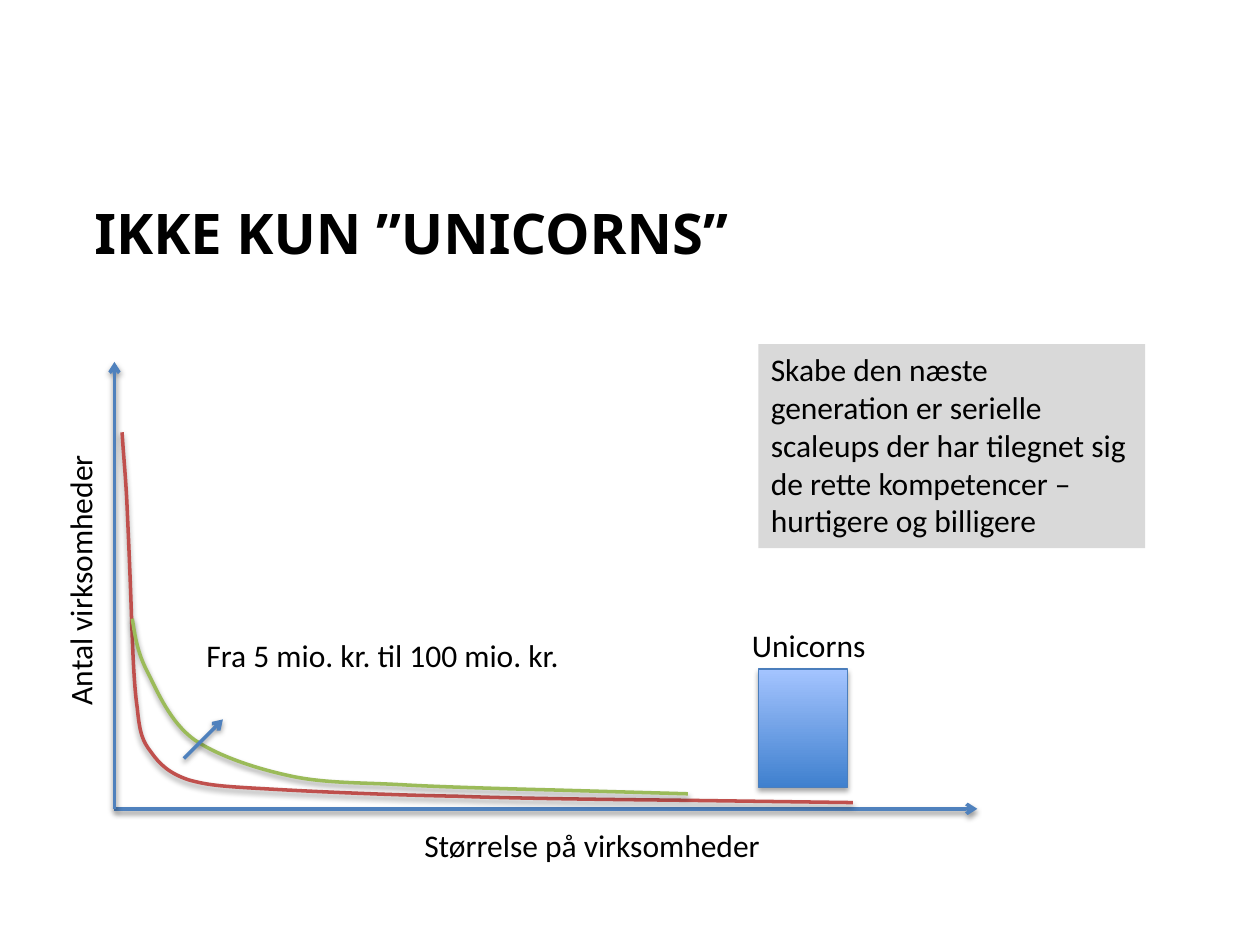
from lxml import etree
from pptx import Presentation
from pptx import util as u
from pptx.dml.color import RGBColor
from pptx.enum import shapes, text
from pptx.oxml import ns

Pt = u.Pt
BLUE, RED, GREEN = "4F81BD", "C0504D", "9BBB59"


def hue(code):
    """Turn a hex string into a colour."""
    return RGBColor.from_string(code)


def sub(node, tag, **attrs):
    """Append a drawing element to a node."""
    return etree.SubElement(node, ns.qn("a:" + tag), attrs)


class Deck:
    """Hold the style and the current slide."""

    font, size, ink = "Calibri", 18, "000000"

    def __init__(self, wide, high):
        """Open a deck with one blank slide."""
        self.show = Presentation()
        self.show.slide_width, self.show.slide_height = Pt(wide), Pt(high)
        self.slide = self.show.slides.add_slide(self.show.slide_layouts[6])
        self.items = self.slide.shapes

    def shade(self, item, alpha=38, drop=1.6):
        """Give an item a soft shadow straight below it."""
        effects = sub(item._element.spPr, "effectLst")
        cast = sub(effects, "outerShdw", blurRad=str(Pt(3.1)), dist=str(Pt(drop)),
                   dir="5400000", rotWithShape="0")
        tint = sub(cast, "srgbClr", val=self.ink)
        sub(tint, "alpha", val=str(alpha * 1000))

    def stroke(self, item, code, width=2):
        """Set the line of an item."""
        item.line.color.rgb = hue(code)
        item.line.width = Pt(width)

    def text(self, words, x, y, w, h, size=None, font=None, bold=False, wrap=True,
             turn=0, fill=None, grow=True, anchor=text.MSO_ANCHOR.TOP):
        """Add a text box with its format."""
        box = self.items.add_textbox(Pt(x), Pt(y), Pt(w), Pt(h))
        box.rotation = turn
        if fill:
            box.fill.solid()
            box.fill.fore_color.rgb = hue(fill)
        frame = box.text_frame
        frame.word_wrap, frame.vertical_anchor = wrap, anchor
        fit = text.MSO_AUTO_SIZE
        frame.auto_size = fit.SHAPE_TO_FIT_TEXT if grow else fit.NONE
        run = frame.paragraphs[0].add_run()
        run.text = words
        run.font.name, run.font.size = font or self.font, Pt(size or self.size)
        run.font.bold, run.font.color.rgb = bold, hue(self.ink)

    def arrow(self, x1, y1, x2, y2):
        """Add a straight arrow."""
        line = self.items.add_connector(
            shapes.MSO_CONNECTOR.STRAIGHT, Pt(x1), Pt(y1), Pt(x2), Pt(y2))
        self.stroke(line, BLUE)
        sub(line.line._get_or_add_ln(), "tailEnd", type="arrow")
        self.shade(line)

    def curve(self, code, points):
        """Add a chain of cubic curves that ends in a straight piece."""
        spots = [(Pt(x), Pt(y)) for x, y in points]
        pen = self.items.build_freeform(*spots[0])
        pen.add_line_segments(spots[1:], close=False)
        item = pen.convert_to_shape()
        item.fill.background()
        self.stroke(item, code)
        item.shadow.inherit = False
        props = item._element.spPr
        props.remove(props.find(ns.qn("a:effectLst")))
        self.shade(item)
        legs = list(props.iter(ns.qn("a:lnTo")))
        for i in range(0, len(legs) - 1, 3):
            bend = etree.Element(ns.qn("a:cubicBezTo"))
            legs[i].addprevious(bend)
            for leg in legs[i:i + 3]:
                bend.append(leg[0])
                leg.getparent().remove(leg)

    def block(self, x, y, w, h, low, high):
        """Add a rectangle that fades upward."""
        item = self.items.add_shape(
            shapes.MSO_SHAPE.RECTANGLE, Pt(x), Pt(y), Pt(w), Pt(h))
        item.fill.gradient()
        item.fill.gradient_angle = 90
        for stop, code in zip(item.fill.gradient_stops, (low, high)):
            stop.color.rgb = hue(code)
        self.stroke(item, "4B7EBC", 0.75)
        self.shade(item, 35, 1.8)


def main():
    """Build the slide."""
    deck = Deck(720, 540)
    deck.text("IKKE KUN ”UNICORNS”", 46.8, 75.6, 637.2, 79.9, size=32, bold=True,
              font="Noto Sans", grow=False, anchor=text.MSO_ANCHOR.BOTTOM)
    left, base = 65.4, 462.2
    deck.arrow(left, base, 558.5, base)
    deck.arrow(left, base, left, 206.8)
    deck.text("Størrelse på virksomheder", 235.4, 468.2, 208, 29, wrap=False)
    deck.text("Antal virksomheder", -33.8, 316.1, 159.1, 29, wrap=False, turn=270)
    deck.curve(RED, [
        (69.8, 247), (70.6, 260.6), (72, 273.6), (72.7, 290.2),
        (73.4, 306), (74.2, 324), (74.9, 343.4),
        (75.6, 362.9), (76.3, 390.2), (78.5, 404.6),
        (79.9, 419), (81.4, 423.4), (86.4, 429.8),
        (91.4, 437), (97.2, 442.1), (108, 445.7),
        (118.8, 448.6), (125.3, 449.3), (151.2, 450.7),
        (176.4, 452.2), (222.5, 454.3), (261.4, 455),
        (299.5, 456.5), (382.3, 457.2), (382.3, 457.2), (487.4, 458.6)])
    deck.curve(GREEN, [
        (75.6, 353.5), (77, 362.9), (78.5, 373), (84.2, 383.8),
        (90, 395.3), (97.2, 412.6), (110.9, 422.6),
        (124.6, 432), (146.2, 439.2), (166.3, 443.5),
        (186.5, 447.8), (208.1, 447.1), (232.6, 448.6),
        (257.8, 450), (315.4, 451.4), (315.4, 451.4), (393.1, 453.6)])
    deck.block(433.4, 382.3, 51.1, 67.7, "3F80CE", "A4C4FF")
    deck.arrow(105.1, 433.4, 127.4, 411.1)
    deck.text("Unicorns", 422.6, 354.2, 79.9, 29)
    deck.text("Fra 5 mio. kr. til 100 mio. kr.", 110.9, 360, 218.2, 29)
    deck.text("Skabe den næste generation er serielle scaleups der har tilegnet sig "
              "de rette kompetencer – hurtigere og billigere",
              433.4, 196.6, 221, 116.6, fill="D9D9D9")
    deck.show.save("out.pptx")


if __name__ == "__main__":
    main()
